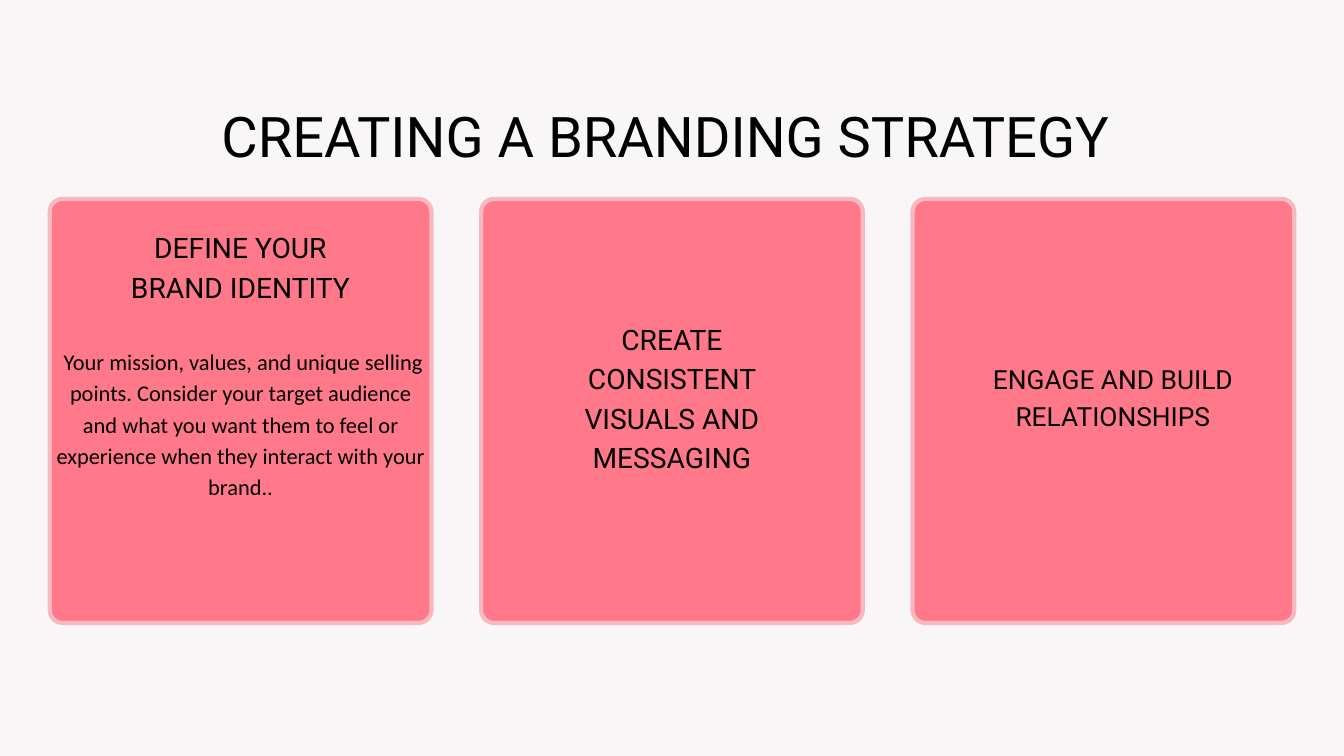
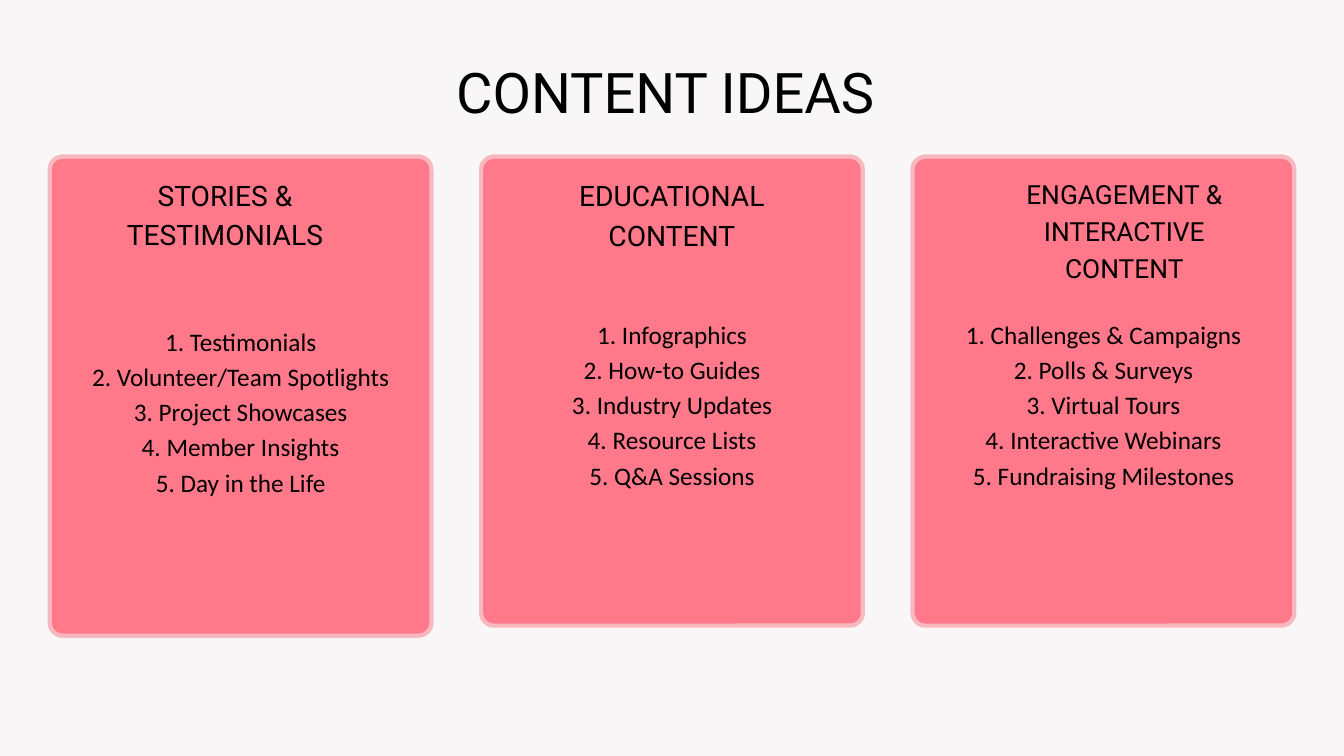
from dataclasses import dataclass

from pptx import Presentation
from pptx.dml.color import RGBColor
from pptx.enum.shapes import MSO_SHAPE
from pptx.enum.text import MSO_AUTO_SIZE, PP_ALIGN
from pptx.util import Pt

ROUNDED = MSO_SHAPE.ROUNDED_RECTANGLE
CENTER = PP_ALIGN.CENTER
GROW = MSO_AUTO_SIZE.SHAPE_TO_FIT_TEXT

COLORS = {"background": "F8F6F7", "card": "FF798A", "border": "F7B8C0", "text": "000000"}

# font, size and line spacing of each kind of text
STYLES = {
    "title": ("Roboto", 60, 60),
    "heading": ("Roboto", 30.2, 42.3),
    "wide heading": ("Roboto", 28.2, 39.5),
    "copy": ("Calibri", 24, 33.6),
    "list": ("Calibri", 27, 37.8),
}

PAGE_WIDTH, PAGE_HEIGHT = 1440, 810
GAP = 53.28
CARD_WIDTH = (PAGE_WIDTH - 4 * GAP) / 3
CORNER_RADIUS = 13.7
TITLE_WIDTH = 1319.04
HEADING_WIDTHS = {"heading": 249.12, "wide heading": 293.76}
BODY_RISE = 10.08
BODY_INSET = 4.32


@dataclass
class Card:
    """heading_shift is the heading's offset from the middle of the card."""
    height: float
    heading: str
    heading_top: float
    heading_height: float
    heading_style: str = "heading"
    heading_shift: float = 0
    body: tuple = ()
    body_top: float = 0
    body_style: str = "list"


STRATEGY_CARDS = [
    Card(454.32, "DEFINE YOUR BRAND IDENTITY", 241.2, 86.4,
         body=(" Your mission, values, and unique selling points. Consider your target "
               "audience and what you want them to feel or experience when they "
               "interact with your brand..",),
         body_top=368, body_style="copy"),
    Card(454.32, "CREATE CONSISTENT VISUALS AND MESSAGING", 339.12, 169.92),
    Card(454.32, "ENGAGE AND BUILD RELATIONSHIPS", 383.76, 81.36, "wide heading", 10.08),
]

IDEA_CARDS = [
    Card(513.36, "STORIES & TESTIMONIALS", 185.04, 84.24, heading_shift=-16.56,
         body=("1. Testimonials", "2. Volunteer/Team Spotlights", "3. Project Showcases",
               "4. Member Insights", "5. Day in the Life"),
         body_top=343.8),
    Card(502.56, "EDUCATIONAL CONTENT", 185.04, 126,
         body=("1. Infographics", "2. How-to Guides", "3. Industry Updates",
               "4. Resource Lists", "5. Q&A Sessions"),
         body_top=336.3),
    Card(502.56, "ENGAGEMENT & INTERACTIVE CONTENT", 185.76, 118.08, "wide heading", 22.32,
         body=("1. Challenges & Campaigns", "2. Polls & Surveys", "3. Virtual Tours",
               "4. Interactive Webinars", "5. Fundraising Milestones"),
         body_top=336.3),
]


def color(name):
    return RGBColor.from_string(COLORS[name])


def add_text(page, lines, style, frame, side_inset=0, top_inset=0, auto_size=GROW):
    box = page.shapes.add_textbox(*map(Pt, frame))
    settings = {
        "word_wrap": True, "auto_size": auto_size,
        "margin_left": Pt(side_inset), "margin_right": Pt(side_inset),
        "margin_top": Pt(top_inset), "margin_bottom": 0,
    }
    for name, value in settings.items():
        setattr(box.text_frame, name, value)
    font, size, spacing = STYLES[style]
    for index, line in enumerate(lines):
        para = box.text_frame.paragraphs[0] if index == 0 else box.text_frame.add_paragraph()
        para.alignment = CENTER
        para.line_spacing = Pt(spacing)
        span = para.add_run()
        span.text = line
        span.font.name = font
        span.font.size = Pt(size)
        span.font.color.rgb = color("text")


def add_panel(page, left, top, height):
    panel = page.shapes.add_shape(ROUNDED, *map(Pt, (left, top, CARD_WIDTH, height)))
    panel.adjustments[0] = CORNER_RADIUS / min(CARD_WIDTH, height)
    panel.shadow.inherit = False
    panel.fill.solid()
    panel.fill.fore_color.rgb = color("card")
    panel.line.color.rgb = color("border")
    panel.line.width = Pt(4.5)


def add_card(page, card, left, top):
    add_panel(page, left, top, card.height)
    if card.body:
        body_frame = (left, top - BODY_RISE, CARD_WIDTH, card.height + BODY_RISE)
        add_text(page, card.body, card.body_style, body_frame, BODY_INSET,
                 card.body_top - top + BODY_RISE, MSO_AUTO_SIZE.NONE)
    width = HEADING_WIDTHS[card.heading_style]
    heading_left = left + (CARD_WIDTH - width) / 2 + card.heading_shift
    add_text(page, [card.heading], card.heading_style,
             (heading_left, card.heading_top, width, card.heading_height))


def add_page(deck, title, title_top, cards, cards_top):
    page = deck.slides.add_slide(deck.slide_layouts[6])
    page.background.fill.solid()
    page.background.fill.fore_color.rgb = color("background")
    add_text(page, [title], "title", (GAP, title_top, TITLE_WIDTH, 64))
    for column, card in enumerate(cards):
        add_card(page, card, GAP + column * (CARD_WIDTH + GAP), cards_top)


def main():
    deck = Presentation()
    deck.slide_width, deck.slide_height = Pt(PAGE_WIDTH), Pt(PAGE_HEIGHT)
    add_page(deck, "CREATING A BRANDING STRATEGY", 120.24, STRATEGY_CARDS, 213.12)
    add_page(deck, "CONTENT IDEAS", 73.44, IDEA_CARDS, 167.76)
    deck.save("out.pptx")


if __name__ == "__main__":
    main()
